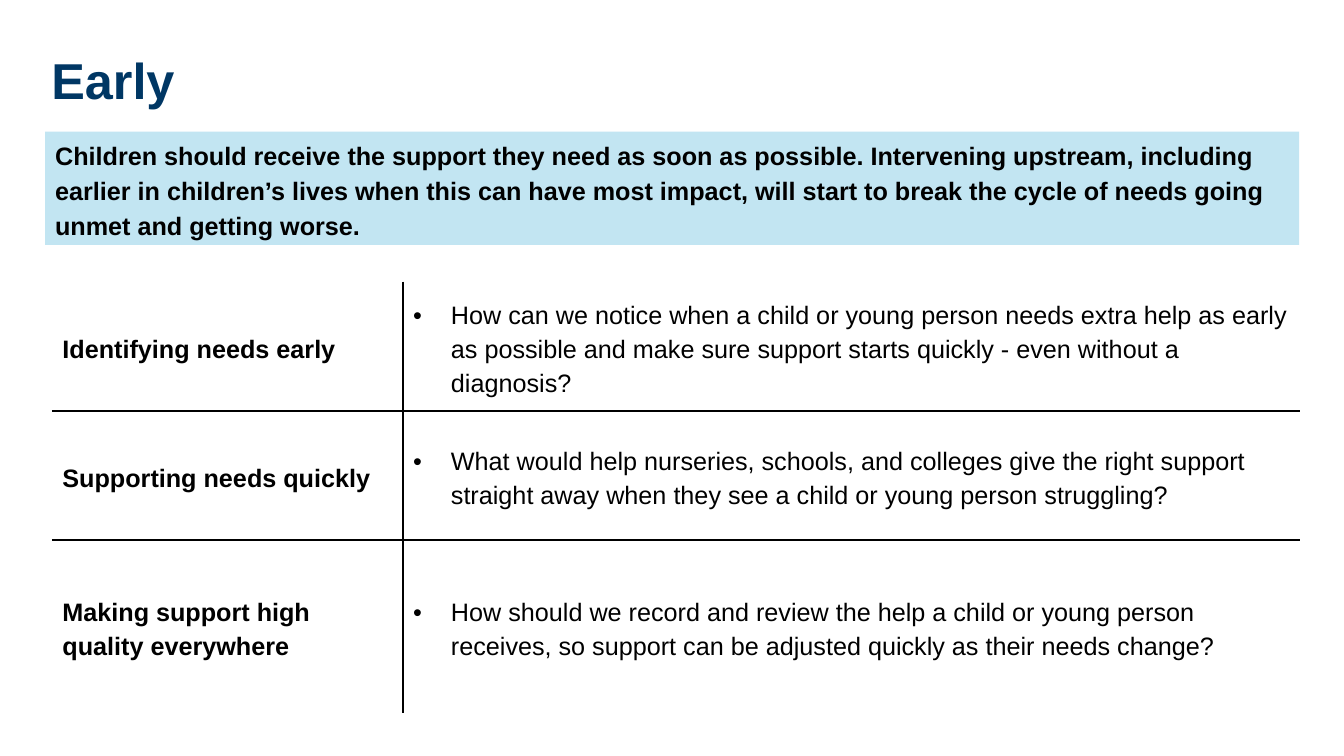
"""Build the "Early" slide: a title, a highlighted summary and a table of questions."""
from lxml import etree
from pptx import Presentation
from pptx.dml.color import RGBColor
from pptx.enum.shapes import MSO_SHAPE
from pptx.enum.text import MSO_ANCHOR, PP_ALIGN
from pptx.oxml.ns import qn
from pptx.util import Cm, Pt

RECTANGLE = MSO_SHAPE.RECTANGLE
MIDDLE = MSO_ANCHOR.MIDDLE
LEFT = PP_ALIGN.LEFT

TITLE = "Early"
SUMMARY = (
    "Children should receive the support they need as soon as possible. "
    "Intervening upstream, including earlier in children’s lives when this can have "
    "most impact, will start to break the cycle of needs going unmet and getting worse."
)
QUESTIONS = [
    ("Identifying needs early",
     "How can we notice when a child or young person needs extra help as early as "
     "possible and make sure support starts quickly - even without a diagnosis?"),
    ("Supporting needs quickly",
     "What would help nurseries, schools, and colleges give the right support "
     "straight away when they see a child or young person struggling?"),
    ("Making support high quality everywhere",
     "How should we record and review the help a child or young person receives, "
     "so support can be adjusted quickly as their needs change?"),
]

COLORS = {"title": "003764", "text": "000000", "band": "C2E5F2", "rule": "000000"}
FONT = "Arial"
TITLE_BOX = (1.04, 1.09, 31.8, 1.8)
SUMMARY_BOX = (1.14, 3.32, 31.6, 2.85)
TABLE_LEFT, TABLE_TOP = 1.32, 7.11
COLUMN_WIDTHS = (8.84, 22.58)
ROW_HEIGHTS = (3.25, 3.25, 4.37)
BULLET_INDENT = Cm(0.95)
RULE_WIDTH = Pt(1.5)


def write(text_frame, text, size, color, bold, spacing=1.0):
    """Fill a text frame with one formatted paragraph and return it."""
    text_frame.text = text
    text_frame.word_wrap = True
    paragraph = text_frame.paragraphs[0]
    paragraph.alignment = LEFT
    paragraph.line_spacing = spacing
    font = paragraph.runs[0].font
    font.name, font.size, font.bold = FONT, Pt(size), bold
    font.color.rgb = RGBColor.from_string(COLORS[color])
    return paragraph


def add_bullet(paragraph):
    """Give a paragraph a hanging round bullet."""
    properties = paragraph._p.get_or_add_pPr()
    properties.set("marL", str(BULLET_INDENT))
    properties.set("indent", str(-BULLET_INDENT))
    etree.SubElement(properties, qn("a:buFont"), typeface=FONT)
    etree.SubElement(properties, qn("a:buChar"), char="•")


def add_borders(cell, sides):
    """Draw a solid rule on each given side of a cell."""
    properties = cell._tc.get_or_add_tcPr()
    for side in sides:
        line = etree.SubElement(properties, qn(f"a:ln{side}"), w=str(RULE_WIDTH))
        fill = etree.SubElement(line, qn("a:solidFill"))
        etree.SubElement(fill, qn("a:srgbClr"), val=COLORS["rule"])


def add_title(slide):
    """Place and format the title placeholder."""
    title = slide.shapes.title
    title.left, title.top, title.width, title.height = map(Cm, TITLE_BOX)
    write(title.text_frame, TITLE, 36, "title", True)
    title.text_frame.vertical_anchor = MIDDLE


def add_summary(slide):
    """Add the highlighted summary band."""
    band = slide.shapes.add_shape(RECTANGLE, *map(Cm, SUMMARY_BOX))
    band.shadow.inherit = False
    band.fill.solid()
    band.fill.fore_color.rgb = RGBColor.from_string(COLORS["band"])
    band.line.fill.background()
    write(band.text_frame, SUMMARY, 18, "text", True, 1.15)
    band.text_frame.vertical_anchor = MIDDLE


def add_questions(slide):
    """Add the table with inner rules only."""
    last_row = len(QUESTIONS) - 1
    frame = slide.shapes.add_table(
        len(QUESTIONS), len(COLUMN_WIDTHS), Cm(TABLE_LEFT), Cm(TABLE_TOP),
        Cm(sum(COLUMN_WIDTHS)), Cm(sum(ROW_HEIGHTS)))
    table = frame.table
    table.first_row = table.horz_banding = False
    for column, width in zip(table.columns, COLUMN_WIDTHS):
        column.width = Cm(width)
    for row, height in zip(table.rows, ROW_HEIGHTS):
        row.height = Cm(height)
    for row_index, texts in enumerate(QUESTIONS):
        for column_index, text in enumerate(texts):
            cell = table.cell(row_index, column_index)
            is_heading = column_index == 0
            cell.vertical_anchor = MIDDLE
            paragraph = write(cell.text_frame, text, 18, "text", is_heading, 1.2)
            if not is_heading:
                add_bullet(paragraph)
            sides = ["R" if is_heading else "L"]
            if row_index > 0:
                sides.append("T")
            if row_index < last_row:
                sides.append("B")
            add_borders(cell, sides)
            cell.fill.background()


def main():
    presentation = Presentation()
    presentation.slide_width, presentation.slide_height = Cm(33.87), Cm(19.05)
    slide = presentation.slides.add_slide(presentation.slide_layouts[5])
    add_title(slide)
    add_summary(slide)
    add_questions(slide)
    presentation.save("out.pptx")


if __name__ == "__main__":
    main()
